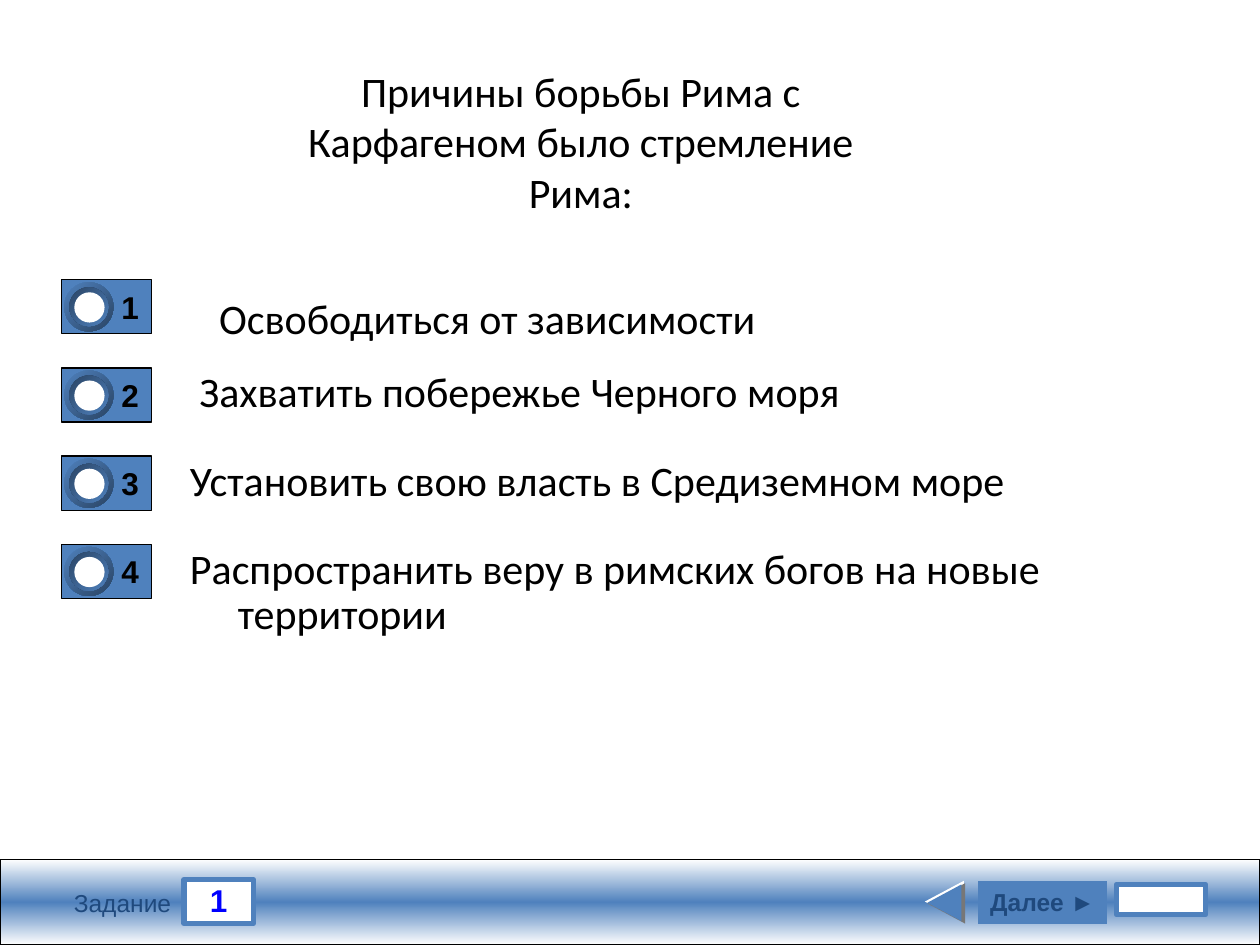
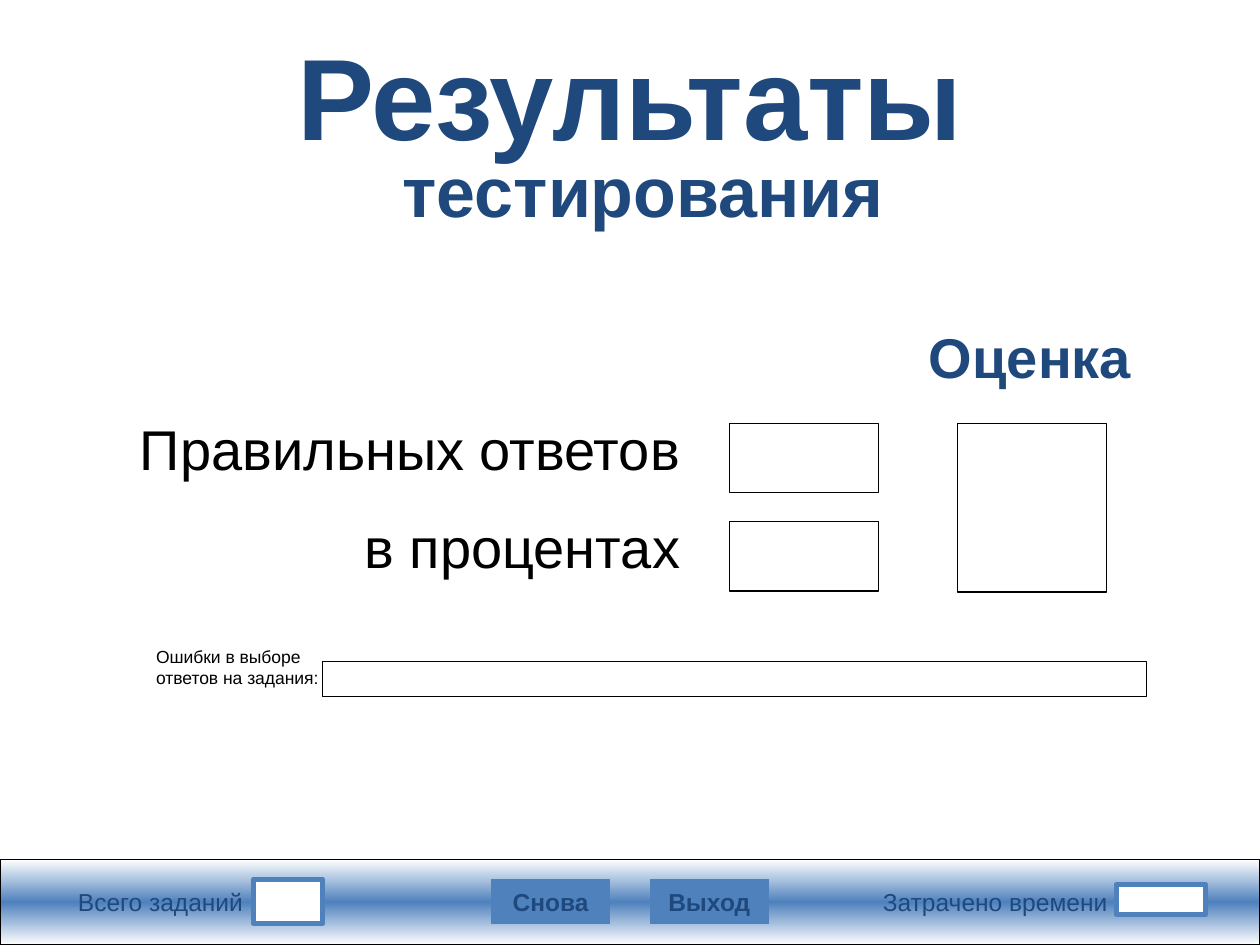
from lxml.etree import SubElement
from pptx import Presentation
from pptx.dml.color import RGBColor
from pptx.enum.shapes import MSO_SHAPE
from pptx.enum.text import MSO_ANCHOR, MSO_AUTO_SIZE, PP_ALIGN
from pptx.oxml.ns import qn
from pptx.util import Inches, Pt

WHITE, BLACK, GREY = "FFFFFF", "000000", "777777"
BLUE, SHADE, NAVY, LINK = "4F81BD", "2A4464", "1F497D", "0000FF"
LEFT, CENTER, RIGHT = PP_ALIGN.LEFT, PP_ALIGN.CENTER, PP_ALIGN.RIGHT
TOP, MIDDLE = MSO_ANCHOR.TOP, MSO_ANCHOR.MIDDLE
INSETS = (0.1, 0.05, 0.1, 0.05)

QUESTION = "Причины борьбы Рима с Карфагеном было стремление Рима:"
# Answer text, left, offset from the top of its button, width, hanging indent
ANSWERS = [
    ("Освободиться от зависимости", 1.64, 0.05, 4.85, 0),
    (" Захватить побережье Черного моря", 1.41, -0.02, 8.07, 0.38),
    ("Установить свою власть в Средиземном море", 1.41, -0.02, 8.07, 0.38),
    ("Распространить веру в римских богов на новые территории", 1.41, -0.02, 8.07, 0.38),
]
ANSWER_TOP, ANSWER_PITCH = 2.22, 0.7
RING_LAYERS = [  # inset from the button corner, diameter, fill
    (0.02, 0.39, (BLUE, SHADE)),
    (0.06, 0.31, (SHADE, BLUE)),
    (0.1, 0.24, WHITE),
]
BACK_ARROW_LAYERS = [
    ((7.33, 7, 0.33, 0.31), WHITE),
    ((7.35, 7.02, 0.32, 0.3), GREY),
    ((7.35, 7.03, 0.29, 0.27), BLUE),
]

RESULT_TITLE = ("Результаты", "тестирования")
RESULT_ROWS = [("Правильных ответов", 3.36), ("в процентах", 4.14)]
GRADE = "Оценка"
MISTAKES = "Ошибки в выборе ответов на задания:"


def rgb(color):
    return RGBColor.from_string(color)


def inches(box):
    return [Inches(value) for value in box]


def paint(shape, fill, angle):
    """Fill with one colour, an even gradient of several, or nothing."""
    if fill is None:
        shape.fill.background()
    elif isinstance(fill, str):
        shape.fill.solid()
        shape.fill.fore_color.rgb = rgb(fill)
    else:
        shape.fill.gradient()
        shape.fill.gradient_angle = 360 - angle
        stops = shape.element.spPr.find(qn("a:gradFill")).find(qn("a:gsLst"))
        for stop in list(stops):
            stops.remove(stop)
        for index, color in enumerate(fill):
            position = 100000 * index // (len(fill) - 1)
            stop = SubElement(stops, qn("a:gs"), pos=str(position))
            SubElement(stop, qn("a:srgbClr"), val=color)


def add_figure(slide, box, fill=WHITE, line=None, weight=0.75, kind=MSO_SHAPE.RECTANGLE, angle=90):
    shape = slide.shapes.add_shape(kind, *inches(box))
    shape.shadow.inherit = False
    paint(shape, fill, angle)
    if line:
        shape.line.color.rgb = rgb(line)
        shape.line.width = Pt(weight)
    else:
        shape.line.fill.background()
    return shape


def style_run(run, size, color, font="Arial", bold=False):
    run.font.size = Pt(size)
    run.font.name = font
    run.font.bold = bold
    run.font.color.rgb = rgb(color)


def set_frame(shape, anchor=TOP, insets=INSETS, wrap=True):
    frame = shape.text_frame
    frame.auto_size = MSO_AUTO_SIZE.NONE
    frame.word_wrap = wrap
    frame.vertical_anchor = anchor
    frame.margin_left, frame.margin_top, frame.margin_right, frame.margin_bottom = inches(insets)
    return frame


def write(shape, text, size, color=BLACK, align=LEFT, font="Arial", bold=False,
          hanging=0, spacing=1.0, **frame_options):
    frame = set_frame(shape, **frame_options)
    frame.text = text
    paragraph = frame.paragraphs[0]
    paragraph.alignment = align
    paragraph.line_spacing = spacing
    paragraph.space_before = Pt(0)
    if hanging:
        properties = paragraph._p.get_or_add_pPr()
        properties.set("marL", str(Inches(hanging)))
        properties.set("indent", str(-Inches(hanging)))
    style_run(paragraph.runs[0], size, color, font, bold)


def add_text(slide, box, text, size, **options):
    write(slide.shapes.add_textbox(*inches(box)), text, size, **options)


def place_title(slide, box):
    title = slide.shapes.title
    title.left, title.top, title.width, title.height = inches(box)
    return title


def add_footer(slide, counter_left):
    """Draw the band with its counter and timer fields; return the counter."""
    add_figure(slide, (0, 6.82, 10, 0.68), (WHITE, BLUE, WHITE), BLACK)
    counter = add_figure(slide, (counter_left, 6.98, 0.55, 0.35), line=BLUE, weight=3)
    add_figure(slide, (8.86, 7.02, 0.71, 0.24), line=BLUE, weight=3)
    return counter


def add_footer_label(slide, box, text):
    add_text(slide, box, text, 14, color=NAVY, align=RIGHT, insets=(0, 0, 0, 0))


def add_footer_button(slide, box, text):
    button = add_figure(slide, box, BLUE, kind=MSO_SHAPE.ACTION_BUTTON_CUSTOM)
    write(button, text, 14, NAVY, CENTER, bold=True, anchor=MIDDLE, wrap=False)


def add_answer_button(slide, number, top):
    left = 0.49
    button = add_figure(slide, (left, top, 0.71, 0.43), BLUE, BLACK)
    write(button, str(number), 18, align=RIGHT, bold=True, anchor=MIDDLE, wrap=False)
    for inset, size, fill in RING_LAYERS:
        add_figure(slide, (left + inset, top + inset, size, size), fill,
                   kind=MSO_SHAPE.OVAL, angle=45)


def build_question(slide):
    title = place_title(slide, (2.11, 0.47, 5, 1.31))
    write(title, QUESTION, 24, align=CENTER, font="Calibri")

    counter = add_footer(slide, 1.46)
    write(counter, "1", 18, LINK, CENTER, bold=True, insets=(0.02, 0.01, 0.02, 0.01))
    add_footer_label(slide, (0.53, 7.05, 0.83, 0.23), "Задание")
    add_footer_button(slide, (7.76, 6.99, 1.03, 0.34), "Далее ►")
    for box, fill in BACK_ARROW_LAYERS:
        add_figure(slide, box, fill, kind=MSO_SHAPE.ISOSCELES_TRIANGLE).rotation = 270

    for index, (text, left, offset, width, hanging) in enumerate(ANSWERS):
        top = ANSWER_TOP + index * ANSWER_PITCH
        add_answer_button(slide, index + 1, top)
        add_text(slide, (left, top + offset, width, 0.47), text, 24, font="Calibri",
                 hanging=hanging, spacing=0.9 if hanging else 1.0)


def build_results(slide):
    title = place_title(slide, (0.75, 0.39, 8.5, 1.61))
    paragraph = set_frame(title, MIDDLE).paragraphs[0]
    paragraph.alignment = CENTER
    paragraph.line_spacing = 0.65
    heading, subheading = RESULT_TITLE
    for text, size in ((heading, 66), (" ", 54), (subheading, 40)):
        run = paragraph.add_run()
        run.text = text
        style_run(run, size, NAVY, bold=True)
        if text == heading:
            paragraph.add_line_break()

    add_footer(slide, 2.01)
    add_footer_label(slide, (0.59, 7.04, 1.34, 0.23), "Всего заданий")
    add_footer_label(slide, (6.9, 7.04, 1.89, 0.23), "Затрачено времени")
    add_footer_button(slide, (3.9, 6.98, 0.94, 0.35), "Снова")
    add_footer_button(slide, (5.16, 6.98, 0.94, 0.35), "Выход")

    for label, top in RESULT_ROWS:
        add_figure(slide, (5.79, top, 1.18, 0.55), line=BLACK)
        add_text(slide, (0.9, top - 0.06, 4.6, 0.6), label, 32, align=RIGHT,
                 hanging=0.38, spacing=0.9)
    add_figure(slide, (7.6, 3.36, 1.18, 1.34), line=BLACK)
    add_text(slide, (7.25, 2.57, 1.85, 0.6), GRADE, 32, color=NAVY, align=CENTER,
             bold=True, hanging=0.38, spacing=0.9)
    add_figure(slide, (2.56, 5.25, 6.54, 0.28), None, BLACK)
    add_text(slide, (1.14, 5.08, 1.5, 0.43), MISTAKES, 10, insets=(0.1, 0.05, 0, 0.05))


def main():
    presentation = Presentation()
    presentation.slide_width = Inches(10)
    presentation.slide_height = Inches(7.5)
    title_only = presentation.slide_layouts[5]
    for build in (build_question, build_results):
        build(presentation.slides.add_slide(title_only))
    presentation.save("out.pptx")


if __name__ == "__main__":
    main()
